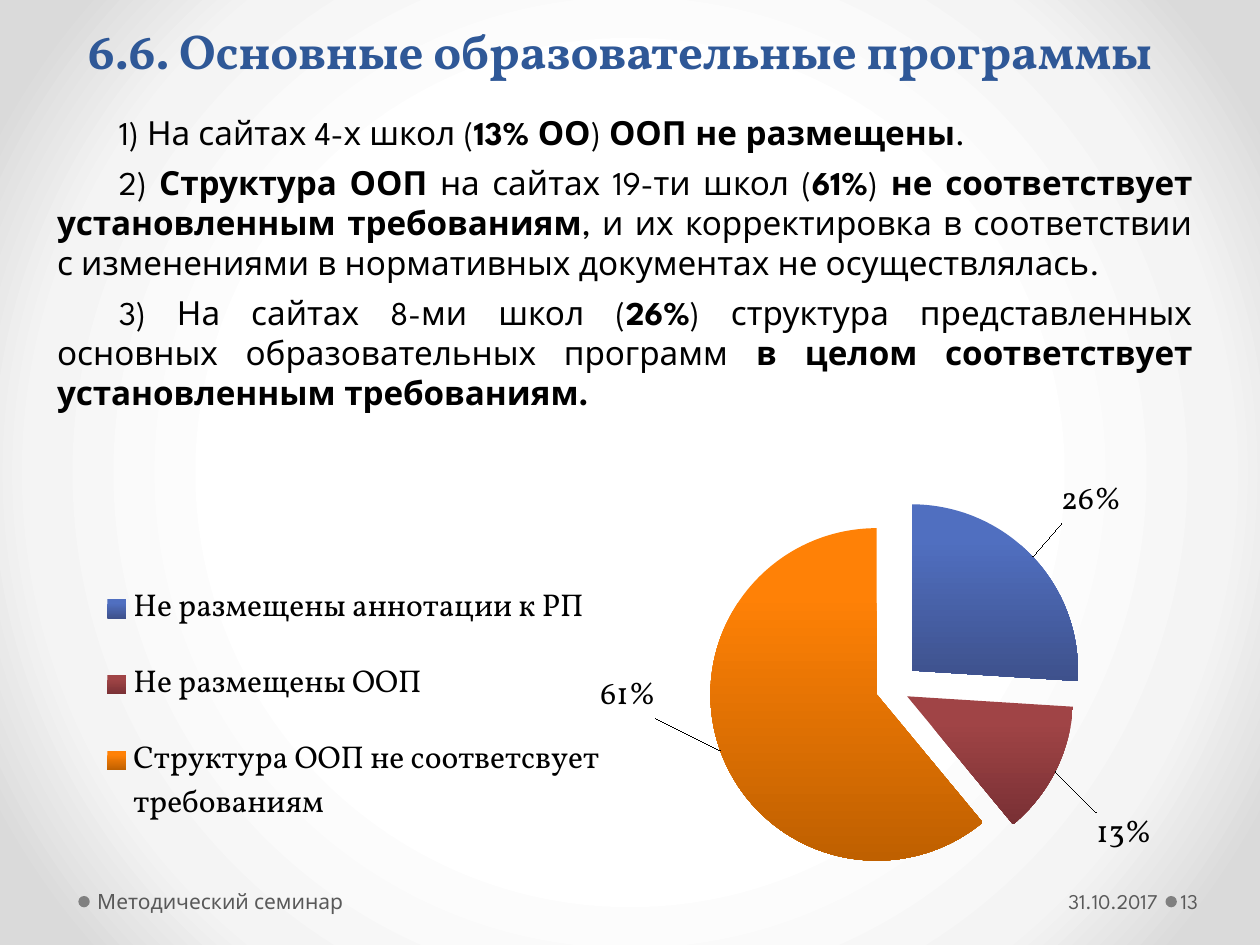
import pptx
import pptx.chart.data
import pptx.dml.color
import pptx.enum.chart
import pptx.enum.shapes
import pptx.enum.text
import pptx.oxml
import pptx.oxml.ns
import pptx.util
from dataclasses import dataclass

Pt = pptx.util.Pt
RGB = pptx.dml.color.RGBColor.from_string
qn = pptx.oxml.ns.qn
Align = pptx.enum.text.PP_ALIGN
Anchor = pptx.enum.text.MSO_ANCHOR


@dataclass(frozen=True)
class Theme:
    heading_font: str = "Vollkorn"
    body_font: str = "League Spartan"
    title: str = "2F5897"
    text: str = "000000"
    footer: str = "595959"
    dot: str = "808080"
    title_size: int = 28
    body_size: int = 19
    chart_size: int = 18
    footer_size: int = 12
    background: tuple = ((50, "FFFFFF"), (76, "F4F4F4"), (92, "DADADA"))


theme = Theme()


def add_text(text, *, box, size, color, font=theme.body_font, align=Align.LEFT,
             anchor=Anchor.MIDDLE, insets=(7.2, 3.6, 7.2, 3.6), indent=0, after=0):
    """Add a text box; lines become paragraphs and *starred* parts are bold."""
    frame = slide.shapes.add_textbox(*map(Pt, box)).text_frame
    frame.word_wrap = True
    frame.vertical_anchor = anchor
    (frame.margin_left, frame.margin_top,
     frame.margin_right, frame.margin_bottom) = map(Pt, insets)
    for number, line in enumerate(text.split("\n")):
        paragraph = frame.add_paragraph() if number else frame.paragraphs[0]
        paragraph.alignment = align
        paragraph.space_after = Pt(after)
        if indent:
            paragraph._p.get_or_add_pPr().set("indent", str(Pt(indent)))
        for part, words in enumerate(line.split("*")):
            if words:
                run = paragraph.add_run()
                run.text = words
                run.font.name = font
                run.font.size = Pt(size)
                run.font.bold = part % 2 == 1
                run.font.color.rgb = RGB(color)


def set_layout(element, position, **values):
    """Give a chart part a manual layout at the given child position."""
    for old in element.findall(qn("c:layout")):
        element.remove(old)
    settings = "".join(f'<c:{name} val="{value}"/>' for name, value in values.items())
    element.insert(position, pptx.oxml.parse_xml(
        f'<c:layout {pptx.oxml.ns.nsdecls("c")}><c:manualLayout>{settings}'
        '</c:manualLayout></c:layout>'))


presentation = pptx.Presentation()
presentation.slide_width, presentation.slide_height = Pt(720), Pt(540)
slide = presentation.slides.add_slide(presentation.slide_layouts[6])

# Radial background
slide.background.fill.gradient()
gradient = slide.element.find(".//" + qn("a:gradFill"))
stops = "".join(f'<a:gs pos="{position * 1000}"><a:srgbClr val="{color}"/></a:gs>'
                for position, color in theme.background)
gradient.getparent().replace(gradient, pptx.oxml.parse_xml(
    f'<a:gradFill {pptx.oxml.ns.nsdecls("a")} rotWithShape="1"><a:gsLst>{stops}</a:gsLst>'
    '<a:path path="circle"><a:fillToRect l="50000" t="50000" r="50000" b="50000"/>'
    '</a:path></a:gradFill>'))

# Footer dots
for left in (666, 44.8):
    dot = slide.shapes.add_shape(pptx.enum.shapes.MSO_SHAPE.OVAL,
                                 Pt(left), Pt(512), Pt(6.5), Pt(6.5))
    dot.shadow.inherit = False
    dot.fill.solid()
    dot.fill.fore_color.rgb = RGB(theme.dot)
    dot.line.fill.background()

# Title and findings
add_text("*6.6. Основные образовательные программы*", box=(16.2, 9.4, 676, 39.6),
         size=theme.title_size, color=theme.title, font=theme.heading_font,
         align=Align.CENTER, anchor=Anchor.BOTTOM)
add_text("1) На сайтах 4-х школ (*13% ОО*) *ООП не размещены*.\n"
         "2) *Структура ООП* на сайтах 19-ти школ (*61%*)* не соответствует "
         "установленным требованиям*, и их корректировка в соответствии с изменениями "
         "в нормативных документах не осуществлялась.\n"
         "3) На сайтах 8-ми школ (*26%*) структура представленных основных "
         "образовательных программ *в целом соответствует установленным требованиям.*",
         box=(25.5, 60.5, 663, 232.6), size=theme.body_size, color=theme.text,
         align=Align.JUSTIFY, anchor=Anchor.TOP, indent=35.3, after=6)

# Pie chart: category, value, top and bottom colour, explosion, label offset
slices = (
    ("Не размещены аннотации к РП", 0.26, "506FC0", "3E518C", 16, (0.02, -0.06)),
    ("Не размещены ООП", 0.13, "A04446", "793034", 10, (0.03, 0.08)),
    ("Структура ООП не соответсвует требованиям", 0.61, "FF8106", "BF6000", 10,
     (-0.05, -0.17)),
)
chart_data = pptx.chart.data.CategoryChartData(number_format="0%")
chart_data.categories = [row[0] for row in slices]
chart_data.add_series("Series 1", [row[1] for row in slices])
chart = slide.shapes.add_chart(pptx.enum.chart.XL_CHART_TYPE.PIE, Pt(31), Pt(264.2),
                               Pt(657.4), Pt(266.4), chart_data).chart
chart.has_title = False
chart.font.name = theme.heading_font
chart.font.size = Pt(theme.chart_size)
chart.font.color.rgb = RGB(theme.text)

# Legend and plot places
chart.has_legend = True
chart.legend.position = pptx.enum.chart.XL_LEGEND_POSITION.LEFT
chart.legend.include_in_layout = False
set_layout(chart.legend._element, 1, xMode="edge", yMode="edge",
           x=0.04, y=0.2, w=0.44, h=0.65)
plot = chart.plots[0]
plot.vary_by_categories = True
set_layout(plot._element.getparent(), 0, layoutTarget="inner", xMode="edge",
           yMode="edge", x=0.584, y=0.096, w=0.289, h=0.78)

# Slices and their labels
series = plot.series[0]
labels = series.data_labels
labels.show_value = True
labels.number_format = "0%"
labels.number_format_is_linked = False
labels.position = pptx.enum.chart.XL_LABEL_POSITION.OUTSIDE_END
for index, (_, _, top, bottom, explosion, (shift_x, shift_y)) in enumerate(slices):
    point = series.points[index]
    fill = point.format.fill
    fill.gradient()
    fill.gradient_angle = 270
    for stop, color, position in zip(fill.gradient_stops, (top, bottom), (0.2, 1)):
        stop.color.rgb = RGB(color)
        stop.position = position
    point.format.line.fill.background()
    data_point = series._element.findall(qn("c:dPt"))[index]
    data_point.find(qn("c:spPr")).addprevious(pptx.oxml.parse_xml(
        f'<c:explosion {pptx.oxml.ns.nsdecls("c")} val="{explosion}"/>'))
    label = point.data_label
    label.font.size = Pt(theme.chart_size)
    label.font.name = theme.heading_font
    label.font.color.rgb = RGB(theme.text)
    label.position = pptx.enum.chart.XL_LABEL_POSITION.OUTSIDE_END
    set_layout(labels._element.findall(qn("c:dLbl"))[index], 1, x=shift_x, y=shift_y)

# Footer: date, event, page number
for text, box, align, insets in (
    ("31.10.2017", (501.2, 500.4, 164, 28.8), Align.RIGHT, (7.2, 3.6, 3.6, 3.6)),
    ("Методический семинар", (52, 500.4, 224, 28.8), Align.LEFT, (3.6, 3.6, 7.2, 3.6)),
    ("13", (672.5, 500.4, 44, 28.8), Align.LEFT, (2.2, 3.6, 3.6, 3.6)),
):
    add_text(text, box=box, size=theme.footer_size, color=theme.footer,
             align=align, insets=insets)

presentation.save("out.pptx")
